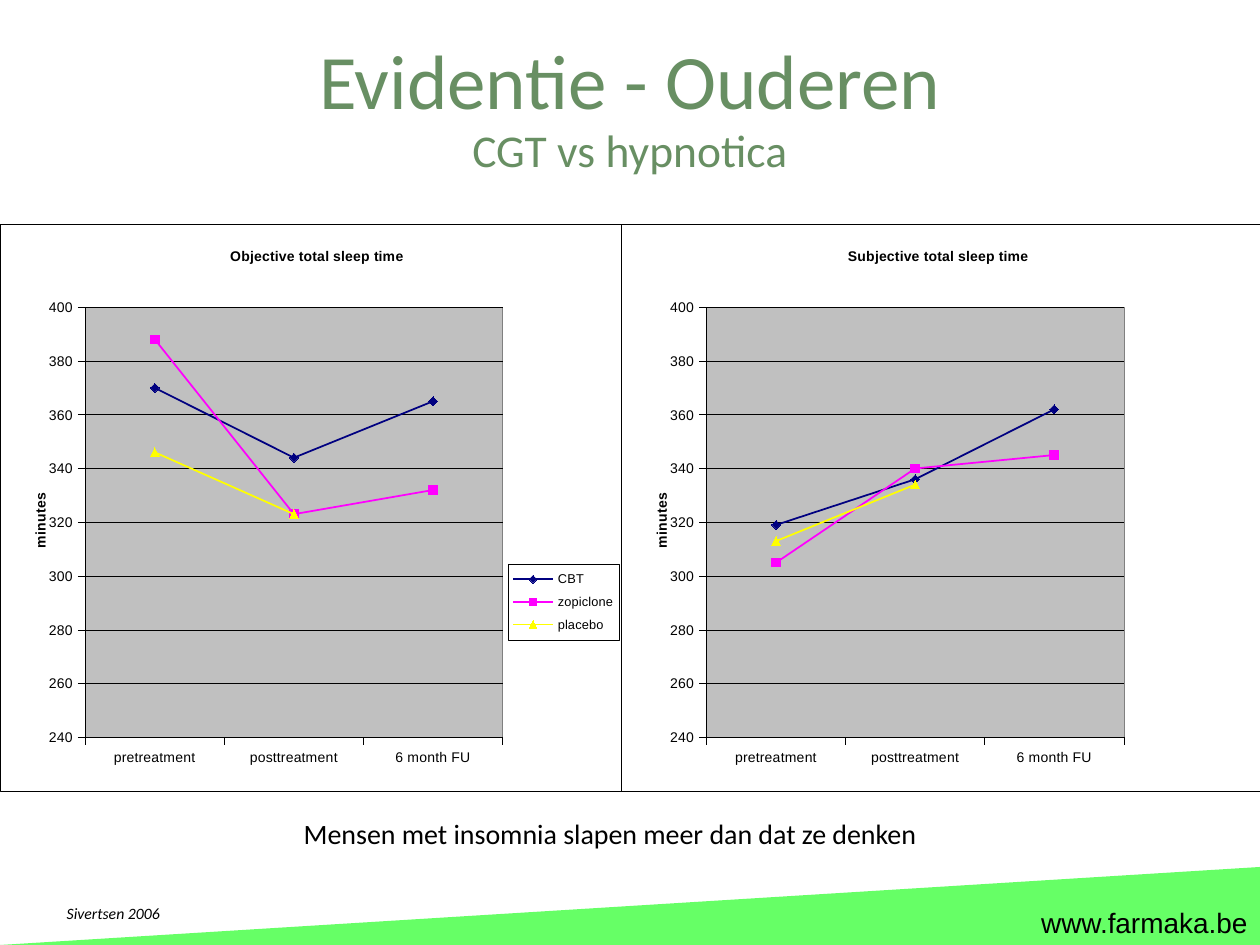
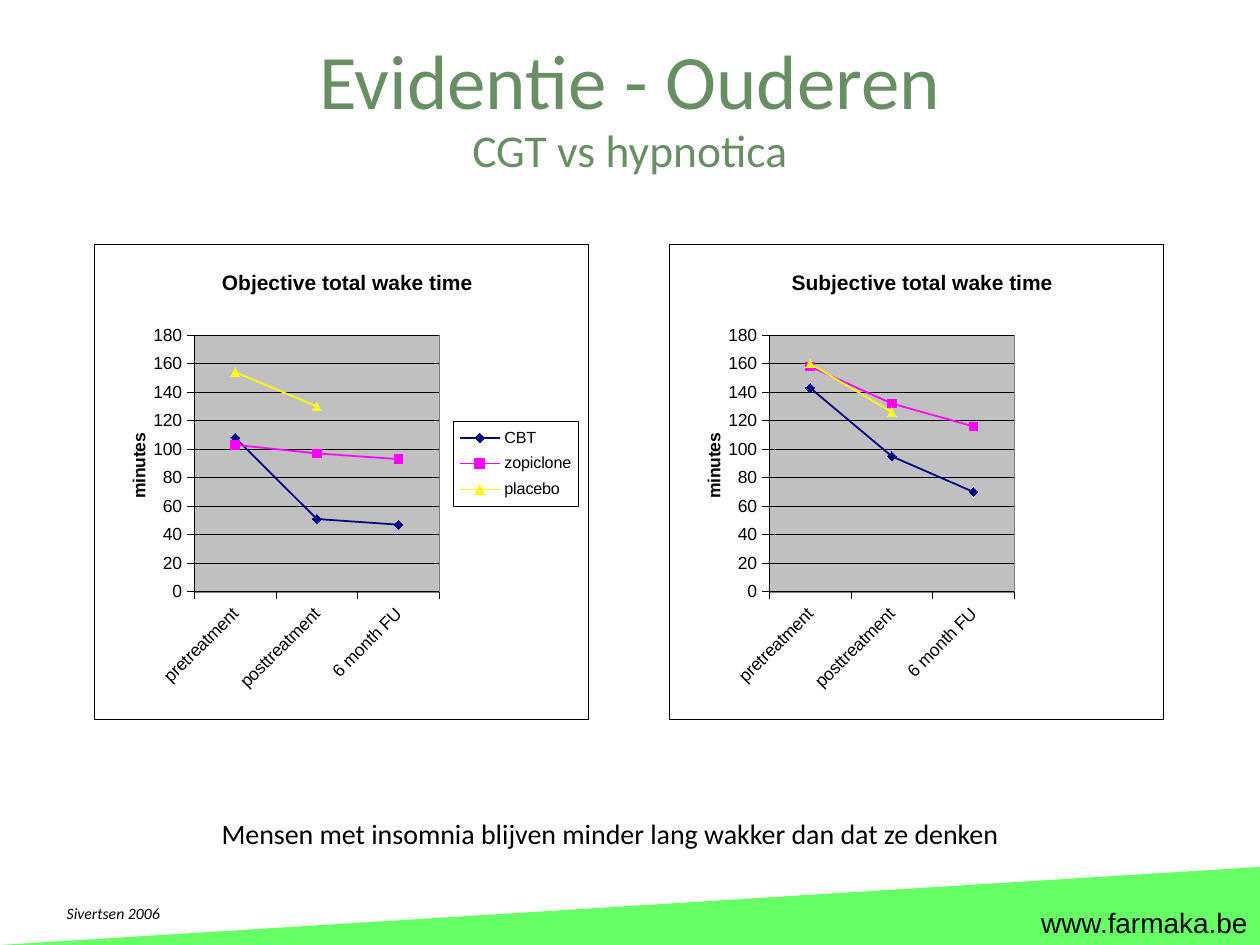
"""Build two slides on sleep and wake time in older people with insomnia."""
from dataclasses import dataclass
from typing import Optional

import lxml.etree
import pptx
import pptx.chart.data
import pptx.dml.color
import pptx.enum.chart
import pptx.enum.shapes
import pptx.enum.text
import pptx.oxml
import pptx.oxml.ns
import pptx.util

Pt = pptx.util.Pt
ALIGN = pptx.enum.text.PP_ALIGN
ANCHOR = pptx.enum.text.MSO_ANCHOR
MARKER = pptx.enum.chart.XL_MARKER_STYLE

BLACK, WHITE, GREY = "000000", "FFFFFF", "C0C0C0"
SAGE, LIME = "688F63", "66FF66"
PAGE_WIDTH, PAGE_HEIGHT = 720, 540
BAND_HEIGHT = 44.6
HAIRLINE = 0.25
MOMENTS = ("pretreatment", "posttreatment", "6 month FU")


@dataclass(frozen=True)
class Frame:
    """Place and size in points; a zero size means automatic."""
    left: float
    top: float
    width: float = 0
    height: float = 0


@dataclass(frozen=True)
class Label:
    """One line of text and its look."""
    frame: Frame
    text: str
    size: float
    color: str = BLACK
    font: str = "Calibri"
    align: ALIGN = ALIGN.CENTER
    anchor: ANCHOR = ANCHOR.TOP
    italic: bool = False


@dataclass(frozen=True)
class Treatment:
    """Name, colour and marker of one treatment arm."""
    name: str
    color: str
    marker: MARKER


@dataclass(frozen=True)
class ChartStyle:
    """What both charts of a slide share, with parts placed inside the chart."""
    plot: Frame
    axis_title: Frame
    legend: Frame
    size: float
    title_size: float
    legend_size: float
    low: float
    high: float
    label_angle: int = 0


@dataclass(frozen=True)
class SleepChart:
    """One chart with a row of minutes for each treatment."""
    frame: Frame
    title: str
    title_place: Frame
    rows: tuple[tuple[Optional[int], ...], ...]
    has_legend: bool


@dataclass(frozen=True)
class Comparison:
    """One slide: an objective and a subjective chart and a conclusion."""
    style: ChartStyle
    charts: tuple[SleepChart, ...]
    conclusion: str


TREATMENTS = (
    Treatment("CBT", "000080", MARKER.DIAMOND),
    Treatment("zopiclone", "FF00FF", MARKER.SQUARE),
    Treatment("placebo", "FFFF00", MARKER.TRIANGLE),
)

SHARED_LABELS = (
    Label(Frame(573.8, 514, 146.2, 26), "www.farmaka.be", 16, font="Arial", align=ALIGN.RIGHT),
    Label(Frame(0, 0, PAGE_WIDTH, 90), "Evidentie - Ouderen", 44, SAGE, anchor=ANCHOR.MIDDLE),
    Label(Frame(0, 66.2, PAGE_WIDTH, 39), "CGT vs hypnotica", 26, SAGE),
    Label(Frame(31, 512.6, 486, 18), "Sivertsen 2006", 9, align=ALIGN.LEFT, italic=True),
)

COMPARISONS = (
    Comparison(
        ChartStyle(Frame(48.7, 47.3, 238.6, 246), Frame(16, 152),
                   Frame(290.3, 194, 63.4, 43.7), 8, 8, 7.3, 240, 400),
        (
            SleepChart(Frame(0, 128.2, 364.3, 324), "Objective total sleep time", Frame(130, 11),
                       ((370, 344, 365), (388, 323, 332), (346, 323, None)), True),
            SleepChart(Frame(355, 128.2, 365, 324), "Subjective total sleep time", Frame(128, 11),
                       ((319, 336, 362), (305, 340, 345), (313, 334, None)), False),
        ),
        "Mensen met insomnia slapen meer dan dat ze denken",
    ),
    Comparison(
        ChartStyle(Frame(57, 51.8, 140.2, 146.8), Frame(17, 106),
                   Frame(205, 101, 71.4, 48.6), 10, 12, 9.2, 0, 180, -45),
        (
            SleepChart(Frame(54, 139.7, 282.2, 271.4), "Objective total wake time", Frame(70.6, 12),
                       ((108, 51, 47), (103, 97, 93), (154, 130, None)), True),
            SleepChart(Frame(382.5, 139.7, 282.2, 271.4), "Subjective total wake time", Frame(67.6, 12),
                       ((143, 95, 70), (158, 132, 116), (160, 126, None)), False),
        ),
        "Mensen met insomnia blijven minder lang wakker dan dat ze denken",
    ),
)


def rgb(color: str) -> pptx.dml.color.RGBColor:
    """Turn a hex string into a colour."""
    return pptx.dml.color.RGBColor.from_string(color)


def lengths(frame: Frame) -> tuple[pptx.util.Length, ...]:
    """Give the four lengths of a frame."""
    return Pt(frame.left), Pt(frame.top), Pt(frame.width), Pt(frame.height)


def set_font(font, size: float, name: str = "Arial", color: str = BLACK,
             bold: bool = False, italic: bool = False) -> None:
    """Set every used property of a font."""
    font.name, font.size, font.bold, font.italic = name, Pt(size), bold, italic
    font.color.rgb = rgb(color)


def set_line(line, color: str, width: float) -> None:
    """Set colour and width of a line."""
    line.color.rgb = rgb(color)
    line.width = Pt(width)


def draw_label(page, label: Label) -> None:
    """Draw one text box."""
    box = page.shapes.add_textbox(*lengths(label.frame))
    box.text_frame.word_wrap = True
    box.text_frame.vertical_anchor = label.anchor
    para = box.text_frame.paragraphs[0]
    para.text = label.text
    para.alignment = label.align
    set_font(para.font, label.size, label.font, label.color, italic=label.italic)


def draw_band(page) -> None:
    """Draw the sloping band at the foot of the page."""
    band = page.shapes.add_shape(
        pptx.enum.shapes.MSO_SHAPE.RIGHT_TRIANGLE,
        *lengths(Frame(0, PAGE_HEIGHT - BAND_HEIGHT, PAGE_WIDTH, BAND_HEIGHT)))
    band.shadow.inherit = False
    band.fill.solid()
    band.fill.fore_color.rgb = rgb(LIME)
    band.line.fill.background()
    band._element.spPr.xfrm.set("flipH", "1")


def area_format(fill: str, line: str):
    """Make the fill and outline element of a chart part."""
    return pptx.oxml.parse_xml(
        f'<c:spPr {pptx.oxml.ns.nsdecls("c", "a")}>'
        f'<a:solidFill><a:srgbClr val="{fill}"/></a:solidFill>'
        f'<a:ln w="{Pt(HAIRLINE)}"><a:solidFill><a:srgbClr val="{line}"/></a:solidFill></a:ln></c:spPr>')


def place_part(part, index: int, place: Frame, whole: Frame, inner: bool = False) -> None:
    """Place a part of a chart by hand."""
    name = pptx.oxml.ns.qn
    for old in part.findall(name("c:layout")):
        part.remove(old)
    layout = lxml.etree.Element(name("c:layout"))
    manual = lxml.etree.SubElement(layout, name("c:manualLayout"))
    settings = [("layoutTarget", "inner")] if inner else []
    settings += [("xMode", "edge"), ("yMode", "edge"),
                 ("x", place.left / whole.width), ("y", place.top / whole.height)]
    if place.width:
        settings += [("w", place.width / whole.width), ("h", place.height / whole.height)]
    for tag, value in settings:
        lxml.etree.SubElement(manual, name(f"c:{tag}")).set("val", str(value))
    part.insert(index, layout)


def style_axes(chart, style: ChartStyle, whole: Frame) -> None:
    """Set scale, grid, labels and title of the axes."""
    values, moments = chart.value_axis, chart.category_axis
    values.minimum_scale, values.maximum_scale, values.major_unit = style.low, style.high, 20
    values.has_major_gridlines = True
    set_line(values.major_gridlines.format.line, BLACK, HAIRLINE)
    for axis in (values, moments):
        axis.major_tick_mark = pptx.enum.chart.XL_TICK_MARK.OUTSIDE
        set_line(axis.format.line, BLACK, HAIRLINE)
        set_font(axis.tick_labels.font, style.size)
    moments._element.xpath("c:txPr/a:bodyPr")[0].set("rot", str(style.label_angle * 60000))
    title = values.axis_title
    title.text_frame.text = "minutes"
    set_font(title.text_frame.paragraphs[0].font, style.size, bold=True)
    body = title._element.xpath(".//a:bodyPr")[0]
    body.set("rot", str(-90 * 60000))
    body.set("vert", "horz")
    place_part(title._element, 1, style.axis_title, whole)


def style_legend(chart, style: ChartStyle, whole: Frame) -> None:
    """Add the boxed legend at the right."""
    chart.has_legend = True
    legend = chart.legend
    legend.position = pptx.enum.chart.XL_LEGEND_POSITION.RIGHT
    legend.include_in_layout = False
    set_font(legend.font, style.legend_size)
    place_part(legend._element, 1, style.legend, whole)
    legend._element.xpath("c:overlay")[0].addnext(area_format(WHITE, BLACK))


def draw_chart(page, sleep: SleepChart, style: ChartStyle) -> None:
    """Draw one line chart."""
    table = pptx.chart.data.CategoryChartData()
    table.categories = MOMENTS
    for treatment, row in zip(TREATMENTS, sleep.rows):
        table.add_series(treatment.name, row)
    chart = page.shapes.add_chart(
        pptx.enum.chart.XL_CHART_TYPE.LINE_MARKERS, *lengths(sleep.frame), table).chart
    set_font(chart.font, style.size)
    chart.plots[0].vary_by_categories = False
    for treatment, series in zip(TREATMENTS, chart.plots[0].series):
        series.smooth = False
        set_line(series.format.line, treatment.color, 1)
        series.marker.style, series.marker.size = treatment.marker, 5
        series.marker.format.fill.solid()
        series.marker.format.fill.fore_color.rgb = rgb(treatment.color)
        set_line(series.marker.format.line, treatment.color, HAIRLINE)
    chart.has_title = True
    title = chart.chart_title
    title.text_frame.text = sleep.title
    set_font(title.text_frame.paragraphs[0].font, style.title_size, bold=True)
    place_part(title._element, 1, sleep.title_place, sleep.frame)
    style_axes(chart, style, sleep.frame)
    chart.has_legend = False
    if sleep.has_legend:
        style_legend(chart, style, sleep.frame)
    space = chart._chartSpace
    plot_area = space.xpath("c:chart/c:plotArea")[0]
    place_part(plot_area, 0, style.plot, sleep.frame, inner=True)
    plot_area.append(area_format(GREY, "808080"))
    space.xpath("c:chart")[0].addnext(area_format(WHITE, BLACK))
    for old in space.xpath("c:roundedCorners"):
        space.remove(old)
    corners = lxml.etree.Element(pptx.oxml.ns.qn("c:roundedCorners"))
    corners.set("val", "0")
    space.xpath("c:date1904")[0].addnext(corners)


def main() -> None:
    """Build and save the deck."""
    deck = pptx.Presentation()
    deck.slide_width, deck.slide_height = Pt(PAGE_WIDTH), Pt(PAGE_HEIGHT)
    for comparison in COMPARISONS:
        page = deck.slides.add_slide(deck.slide_layouts[6])
        draw_band(page)
        for label in SHARED_LABELS:
            draw_label(page, label)
        for sleep in comparison.charts:
            draw_chart(page, sleep, comparison.style)
        draw_label(page, Label(Frame(20, 463, 657.4, 26.6), comparison.conclusion, 16))
    deck.save("out.pptx")


if __name__ == "__main__":
    main()
